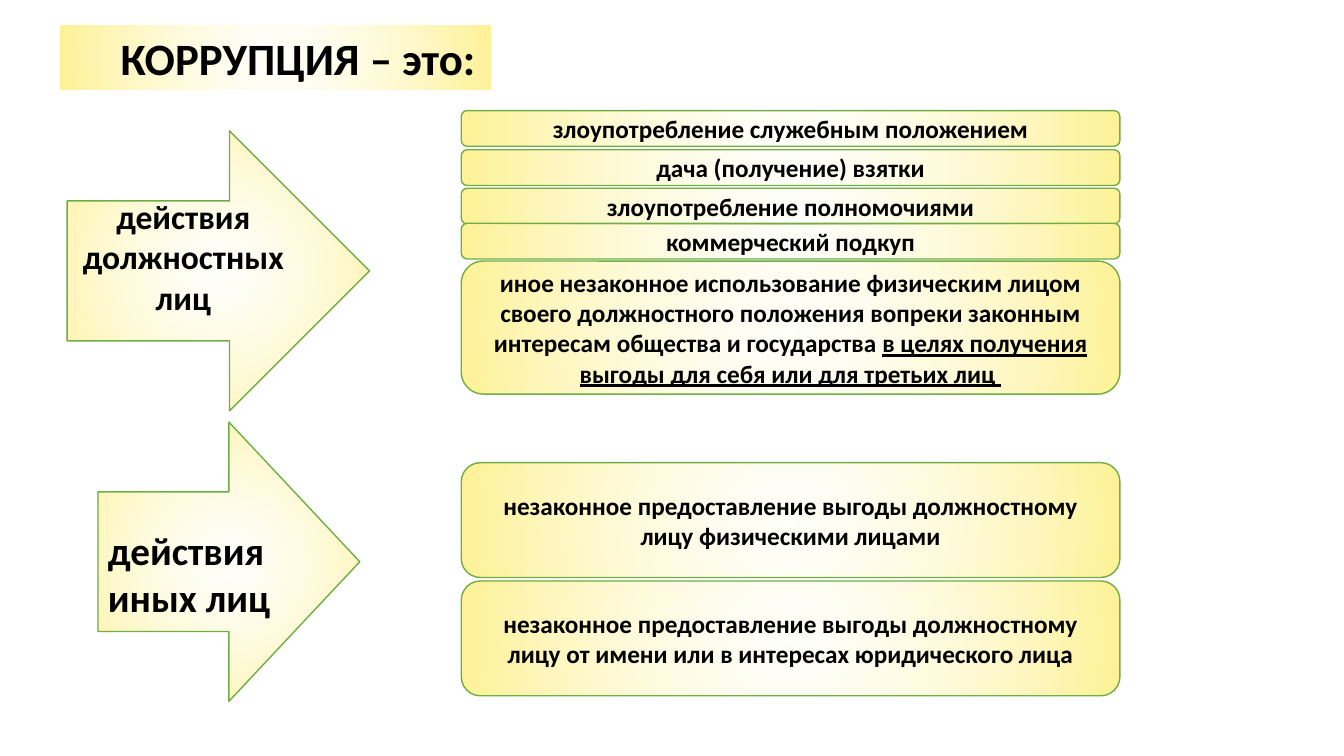
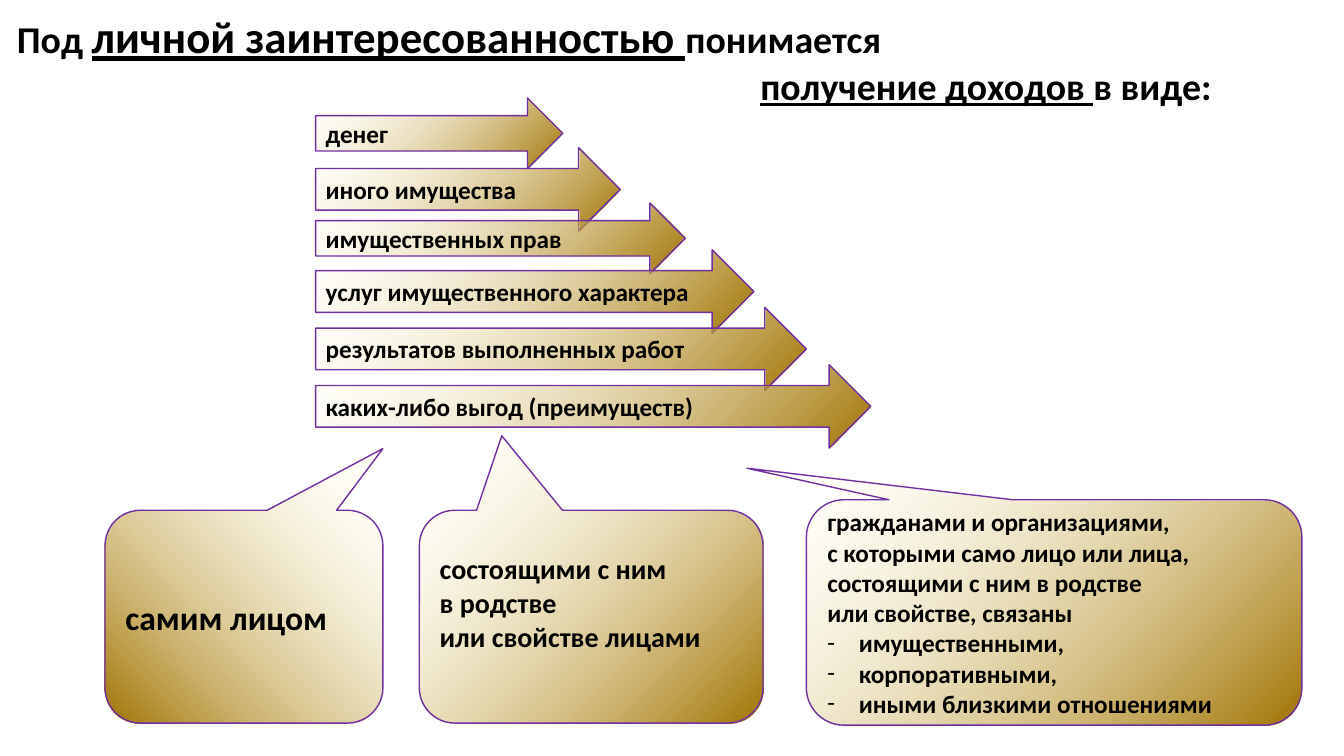
from lxml import etree
from pptx import Presentation
from pptx.dml.color import RGBColor
from pptx.enum.shapes import MSO_SHAPE
from pptx.enum.text import MSO_ANCHOR, PP_ALIGN
from pptx.oxml.ns import qn
from pptx.util import Pt

RECT = MSO_SHAPE.RECTANGLE
ROUNDED = MSO_SHAPE.ROUNDED_RECTANGLE
ARROW = MSO_SHAPE.RIGHT_ARROW
CALLOUT = MSO_SHAPE.ROUNDED_RECTANGULAR_CALLOUT
MIDDLE, TOP = MSO_ANCHOR.MIDDLE, MSO_ANCHOR.TOP
LEFT, CENTER = PP_ALIGN.LEFT, PP_ALIGN.CENTER

FONT = "Calibri"
COLORS = {"text": "000000", "cream": "FFFBDD", "yellow": "FFF397",
          "gold": "A17403", "green": "70AD47", "purple": "7030A0"}
MIDPOINT, TOP_LEFT, TOP_RIGHT = (50, 50, 50, 50), (0, 0, 100, 100), (100, 0, 0, 100)
INSETS = (7.2, 3.6, 7.2, 3.6)


def glow(shape, edge, focus, opacity):
    """Fill a shape with a circular gradient spreading from a focus."""
    fill = etree.Element(qn("a:gradFill"), rotWithShape="1")
    stops = etree.SubElement(fill, qn("a:gsLst"))
    for position, name, alpha in ((0, "cream", opacity), (100, edge, 100)):
        stop = etree.SubElement(stops, qn("a:gs"), pos=str(position * 1000))
        color = etree.SubElement(stop, qn("a:srgbClr"), val=COLORS[name])
        if alpha < 100:
            etree.SubElement(color, qn("a:alpha"), val=str(alpha * 1000))
    circle = etree.SubElement(fill, qn("a:path"), path="circle")
    sides = {side: str(share * 1000) for side, share in zip("ltrb", focus)}
    etree.SubElement(circle, qn("a:fillToRect"), **sides)
    shape._element.spPr.find(qn("a:prstGeom")).addnext(fill)


def write(shape, lines, size, align=LEFT, anchor=MIDDLE, insets=INSETS):
    """Write lines, each a string or a list of (text, size, underlined) runs."""
    frame = shape.text_frame
    frame.word_wrap = True
    frame.vertical_anchor = anchor
    (frame.margin_left, frame.margin_top,
     frame.margin_right, frame.margin_bottom) = map(Pt, insets)
    for index, line in enumerate(lines):
        paragraph = frame.add_paragraph() if index else frame.paragraphs[0]
        paragraph.alignment = align
        runs = [(line, size, False)] if isinstance(line, str) else line
        for text, run_size, underlined in runs:
            run = paragraph.add_run()
            run.text = text
            font = run.font
            font.name, font.size, font.bold = FONT, Pt(run_size), True
            font.underline = underlined
            font.color.rgb = RGBColor.from_string(COLORS["text"])
    return frame.paragraphs


def indent(paragraph, left, first=0, bullet=None):
    """Indent a paragraph and optionally give it a bullet."""
    properties = paragraph._p.get_or_add_pPr()
    properties.set("marL", str(Pt(left)))
    properties.set("indent", str(Pt(first)))
    if bullet:
        etree.SubElement(properties, qn("a:buFont"), typeface=FONT)
        etree.SubElement(properties, qn("a:buChar"), char=bullet)


def panel(slide, kind, box, edge, line=None, focus=MIDPOINT, opacity=13):
    """Add a gradient shape with an optional outline."""
    shape = slide.shapes.add_shape(kind, *map(Pt, box))
    shape.shadow.inherit = False
    glow(shape, edge, focus, opacity)
    if line:
        shape.line.color.rgb = RGBColor.from_string(COLORS[line])
        shape.line.width = Pt(1)
    else:
        shape.line.fill.background()
    return shape


def title_band(slide, box, title):
    """Place the title on its yellow band."""
    write(panel(slide, RECT, box, "yellow"), [title], 32, insets=(43.2, 3.6, 0, 3.6))


def actor_arrow(slide, box, lines, size, align, insets):
    """Place the arrow that names who acts."""
    write(panel(slide, ARROW, box, "yellow", "green"), lines, size, align, insets=insets)


def offence_list(slide, box, offences):
    """Stack offence bars, each with its offset and height, in the box."""
    left, top, width = box
    for offset, height, line in offences:
        bar = panel(slide, ROUNDED, (left, top + offset, width, height), "yellow", "green")
        write(bar, [line], 18, CENTER)


def interest_title(slide, box):
    """Place the two-line heading with its second line set far right."""
    heading = slide.shapes.add_textbox(*map(Pt, box))
    lines = [[("Под ", 27, False), ("личной заинтересованностью ", 32, True),
              ("понимается", 27, False)],
             [("получение доходов ", 27, True), ("в виде:", 27, False)]]
    indent(write(heading, lines, 27, anchor=TOP)[1], 531)


def income_arrows(slide, box, incomes):
    """Place the lengthening arrows from the box's left edge."""
    left, top = box
    for offset, width, height, income in incomes:
        arrow = panel(slide, ARROW, (left, top + offset, width, height),
                      "gold", "purple", TOP_LEFT)
        write(arrow, [income], 18)


def beneficiary(slide, box, tip, lines, size, focus=TOP_LEFT, opacity=18,
                insets=INSETS, bullets=0):
    """Place a callout for a beneficiary, with its last lines bulleted."""
    callout = panel(slide, CALLOUT, box, "gold", "purple", focus, opacity)
    callout.adjustments[0], callout.adjustments[1] = tip
    paragraphs = write(callout, lines, size, insets=insets)
    for paragraph in paragraphs[len(paragraphs) - bullets:]:
        indent(paragraph, 22.5, -22.5, "-")


def corruption_slide(slide):
    """Build the definition of corruption."""
    title_band(slide, (43, 18, 307.5, 46), "КОРРУПЦИЯ – это:")
    actor_arrow(slide, (48, 93.5, 216, 200), ["действия должностных лиц"], 24, CENTER,
                (7.2, 3.6, 7.2, 24))
    actor_arrow(slide, (70, 301.5, 187, 199.5), ["действия", "иных лиц"], 28, LEFT,
                (7.2, 20, 7.2, 3.6))
    offence_list(slide, (329.5, 79, 470.5), [
        (0, 25.5, "злоупотребление служебным положением"),
        (28, 25.5, "дача (получение) взятки"),
        (55.5, 25.5, "злоупотребление полномочиями"),
        (80.5, 25.5, "коммерческий подкуп"),
        (107.5, 95, [
            ("иное незаконное использование физическим лицом своего должностного "
             "положения вопреки законным интересам общества и государства ", 18, False),
            ("в целях получения выгоды для себя или для третьих лиц ", 18, True)])])
    offence_list(slide, (329.5, 330.5, 470.5), [
        (0, 82, "незаконное предоставление выгоды должностному лицу физическими лицами"),
        (84.5, 82, "незаконное предоставление выгоды должностному лицу "
                   "от имени или в интересах юридического лица")])


def interest_slide(slide):
    """Build the explanation of personal interest."""
    interest_title(slide, (5, 3, 917, 80))
    beneficiary(slide, (299.5, 364.5, 245.5, 152), (-0.26, -0.85),
                ["состоящими с ним", "в родстве", "или свойстве лицами"], 20,
                insets=(7.2, 3.6, 7.2, 24))
    beneficiary(slide, (75, 364.5, 198.5, 152), (0.5, -0.79), ["самим лицом"], 24, TOP_RIGHT)
    beneficiary(slide, (576, 357, 354, 161), (-0.62, -0.64),
                ["гражданами и организациями,", "с которыми само лицо или лица,",
                 "состоящими с ним в родстве", "или свойстве, связаны",
                 "имущественными,", "корпоративными,", "иными близкими отношениями"],
                18, opacity=13, bullets=3)
    income_arrows(slide, (225.5, 70), [
        (0, 176.5, 50.5, "денег"),
        (35.5, 217.5, 59.5, "иного имущества"),
        (75, 264, 50.5, "имущественных прав"),
        (108.5, 313, 59.5, "услуг имущественного характера"),
        (149.5, 350.5, 59.5, "результатов выполненных работ"),
        (190.5, 396.5, 59.5, "каких-либо выгод (преимуществ)")])


def main():
    """Build and save the presentation."""
    deck = Presentation()
    deck.slide_width, deck.slide_height = Pt(960), Pt(540)
    blank = deck.slide_layouts[6]
    for build in (corruption_slide, interest_slide):
        build(deck.slides.add_slide(blank))
    deck.save("out.pptx")


if __name__ == "__main__":
    main()
